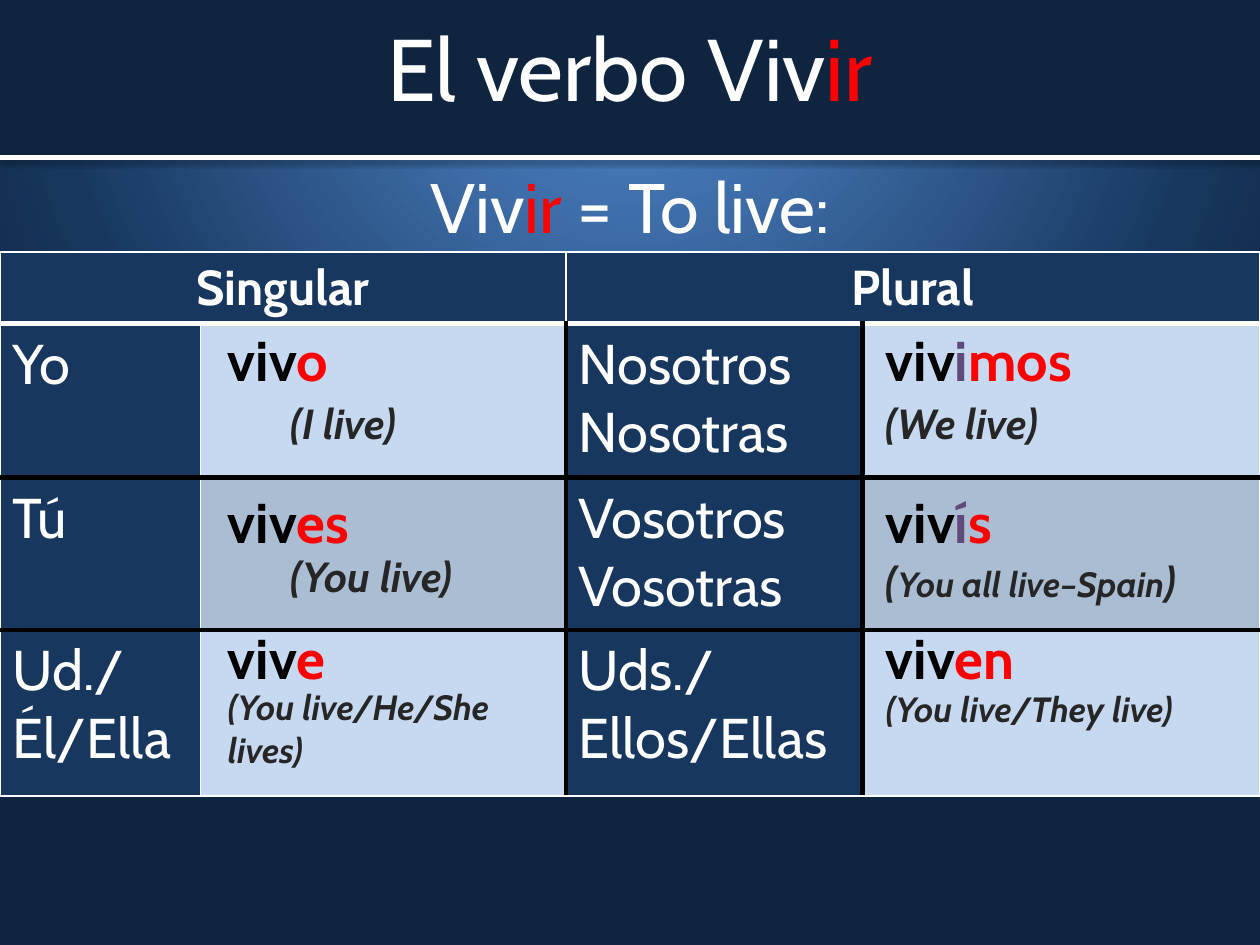
from pptx import Presentation
from pptx.dml.color import RGBColor
from pptx.enum.shapes import MSO_CONNECTOR, MSO_SHAPE
from pptx.enum.text import MSO_ANCHOR, PP_ALIGN
from pptx.oxml import parse_xml
from pptx.oxml.ns import nsdecls
from pptx.util import Pt

NAVY, BLUE, WHITE, BLACK = "0F243E", "17375E", "FFFFFF", "000000"
RED, PURPLE, GREY = "FF0000", "604A7B", "262626"
PALE, DULL = "C6D9F1", "ABBDD2"
THIN, THICK, BAR = (WHITE, 1), (WHITE, 3), (BLACK, 3)
PLAIN = "{2D5ABB26-0587-4C30-8999-92F81FD0307C}"

COLS = [114.5, 209, 169.5, 227]
ROWS = [41, 88, 87, 95]
ACROSS = [THIN, THICK, BAR, BAR, THIN]
DOWN = [THIN, THIN, BAR, BAR, THIN]
NOUNS = [
    (["Yo"], ["Nosotros", "Nosotras"]),
    (["Tú"], ["Vosotros", "Vosotras"]),
    (["Ud./Él/Ella"], ["Uds./Ellos/Ellas"]),
]

# Left, top, width and height within the chart, then coloured parts of the verb
VERBS = [
    (123, 39.5, 177, 45, [("viv", BLACK), ("o", RED)]),
    (123, 132, 168, 45, [("viv", BLACK), ("es", RED)]),
    (123, 210, 177, 48, [("viv", BLACK), ("e", RED)]),
    (499, 39.5, 203, 49, [("viv", BLACK), ("i", PURPLE), ("mos", RED)]),
    (499, 132, 181, 45, [("viv", BLACK), ("í", PURPLE), ("s", RED)]),
    (499, 210, 173, 45, [("viv", BLACK), ("en", RED)]),
]
# The same box, then the size and the parts of the meaning
NOTES = [
    (159, 80.5, 127, 36, 24, [("(I live)", GREY)]),
    (159, 168, 154, 36, 24, [("(You live)", GREY)]),
    (123, 245, 190, 55, 20, [("(You live/He/She lives)", GREY)]),
    (499, 80.5, 154, 36, 24, [("(We live)", GREY)]),
    (499, 170.5, 210, 36, 24,
     [("(", GREY), ("You all live–Spain", GREY, 20), (")", GREY)]),
    (499, 246, 210, 31, 20, [("(You live/They live)", GREY)]),
]


def color(code):
    return RGBColor.from_string(code)


def write(para, parts, size, bold=False, italic=False, align=None):
    """Fill a paragraph from (text, colour[, size]) parts."""
    font = para.font
    font.name, font.size, font.bold, font.italic = "Cabin", Pt(size), bold, italic
    para.alignment = align
    for text, code, *own in parts:
        run = para.add_run()
        run.text = text
        run.font.color.rgb = color(code)
        if own:
            run.font.size = Pt(own[0])


def backdrop(slide):
    stops = "".join(
        f'<a:gs pos="{pos}000"><a:srgbClr val="{code}"/></a:gs>'
        for pos, code in [(0, "558ED5"), (75, BLUE), (100, NAVY)])
    slide.element.cSld.insert(0, parse_xml(
        f'<p:bg {nsdecls("p", "a")}><p:bgPr><a:gradFill rotWithShape="1">'
        f'<a:gsLst>{stops}</a:gsLst><a:path path="circle">'
        '<a:fillToRect l="50000" t="-80000" r="50000" b="180000"/></a:path>'
        '</a:gradFill><a:effectLst/></p:bgPr></p:bg>'))


def banner(slide, left, top, width, height):
    band = slide.shapes.add_shape(
        MSO_SHAPE.RECTANGLE, Pt(left), Pt(top), Pt(width), Pt(height))
    band.shadow.inherit = False
    band.fill.solid()
    band.fill.fore_color.rgb = color(NAVY)
    band.line.fill.background()
    base = Pt(top + height)
    rule = slide.shapes.add_connector(
        MSO_CONNECTOR.STRAIGHT, Pt(left), base, Pt(left + width), base)
    rule.line.color.rgb = color(WHITE)
    rule.line.width = Pt(3)
    rule.element.spPr.append(parse_xml(
        f'<a:effectLst {nsdecls("a")}><a:outerShdw blurRad="{Pt(3.1)}" '
        f'dist="{Pt(1.6)}" dir="5400000" rotWithShape="0"><a:srgbClr val="000000">'
        '<a:alpha val="38000"/></a:srgbClr></a:outerShdw></a:effectLst>'))


def heading(slide, left, top, width, height, parts, size, anchor, before=0):
    box = slide.shapes.add_textbox(Pt(left), Pt(top), Pt(width), Pt(height))
    frame = box.text_frame
    frame.word_wrap = True
    frame.vertical_anchor = anchor
    para = frame.paragraphs[0]
    para.space_before = Pt(before)
    write(para, parts, size, align=PP_ALIGN.CENTER)


def grid(slide, left, top, cols, rows):
    """Add an unstyled table with the given column widths and row heights."""
    frame = slide.shapes.add_table(
        len(rows), len(cols), Pt(left), Pt(top), Pt(sum(cols)), Pt(sum(rows)))
    table = frame.table
    table.first_row = table.horz_banding = False
    frame.element.graphic.graphicData.tbl.tblPr.find(
        "{*}tableStyleId").text = PLAIN
    for col, size in zip(table.columns, cols):
        col.width = Pt(size)
    for row, size in zip(table.rows, rows):
        row.height = Pt(size)
    return table


def dress(cell, fill, edges):
    """Set the fill and the left, right, top and bottom borders."""
    props = cell._tc.get_or_add_tcPr()
    for side, (code, width) in zip("LRTB", edges):
        props.append(parse_xml(
            f'<a:ln{side} {nsdecls("a")} w="{Pt(width)}"><a:solidFill>'
            f'<a:srgbClr val="{code}"/></a:solidFill></a:ln{side}>'))
    cell.fill.solid()
    cell.fill.fore_color.rgb = color(fill)


def chart(slide, left, top):
    table = grid(slide, left, top, COLS, ROWS)
    for col, text in [(0, "Singular"), (2, "Plural")]:
        cell = table.cell(0, col)
        cell.merge(table.cell(0, col + 1))
        dress(cell, BLUE, [THIN, THIN, THIN, THICK])
        write(cell.text_frame.paragraphs[0], [(text, WHITE)], 28, True,
              align=PP_ALIGN.CENTER)
    for row, nouns in enumerate(NOUNS, 1):
        for col in range(4):
            cell = table.cell(row, col)
            tint = DULL if row == 2 else PALE
            dress(cell, tint if col % 2 else BLUE,
                  DOWN[col:col + 2] + ACROSS[row:row + 2])
            if col % 2:
                continue
            frame = cell.text_frame
            for num, noun in enumerate(nouns[col // 2]):
                para = frame.add_paragraph() if num else frame.paragraphs[0]
                write(para, [(noun, WHITE)], 32)


def label(slide, left, top, width, height, parts, size, italic=False):
    cell = grid(slide, left, top, [width], [height]).cell(0, 0)
    write(cell.text_frame.paragraphs[0], parts, size, True, italic)


def lesson(slide, left, top):
    chart(slide, left, top)
    for x, y, width, height, parts in VERBS:
        label(slide, left + x, top + y, width, height, parts, 32)
    for x, y, width, height, size, parts in NOTES:
        label(slide, left + x, top + y, width, height, parts, size, True)


def main():
    deck = Presentation()
    deck.slide_width, deck.slide_height = Pt(720), Pt(540)
    slide = deck.slides.add_slide(deck.slide_layouts[6])
    backdrop(slide)
    banner(slide, 0, 0, 720, 90)
    heading(slide, 0, 90, 720, 374,
            [("Viv", WHITE), ("ir", RED), (" = To live:", WHITE)],
            40, MSO_ANCHOR.TOP, 8)
    heading(slide, 0, 0, 720, 76, [("El verbo Viv", WHITE), ("ir", RED)],
            50, MSO_ANCHOR.MIDDLE)
    lesson(slide, 0, 144)
    deck.save("out.pptx")


if __name__ == "__main__":
    main()
